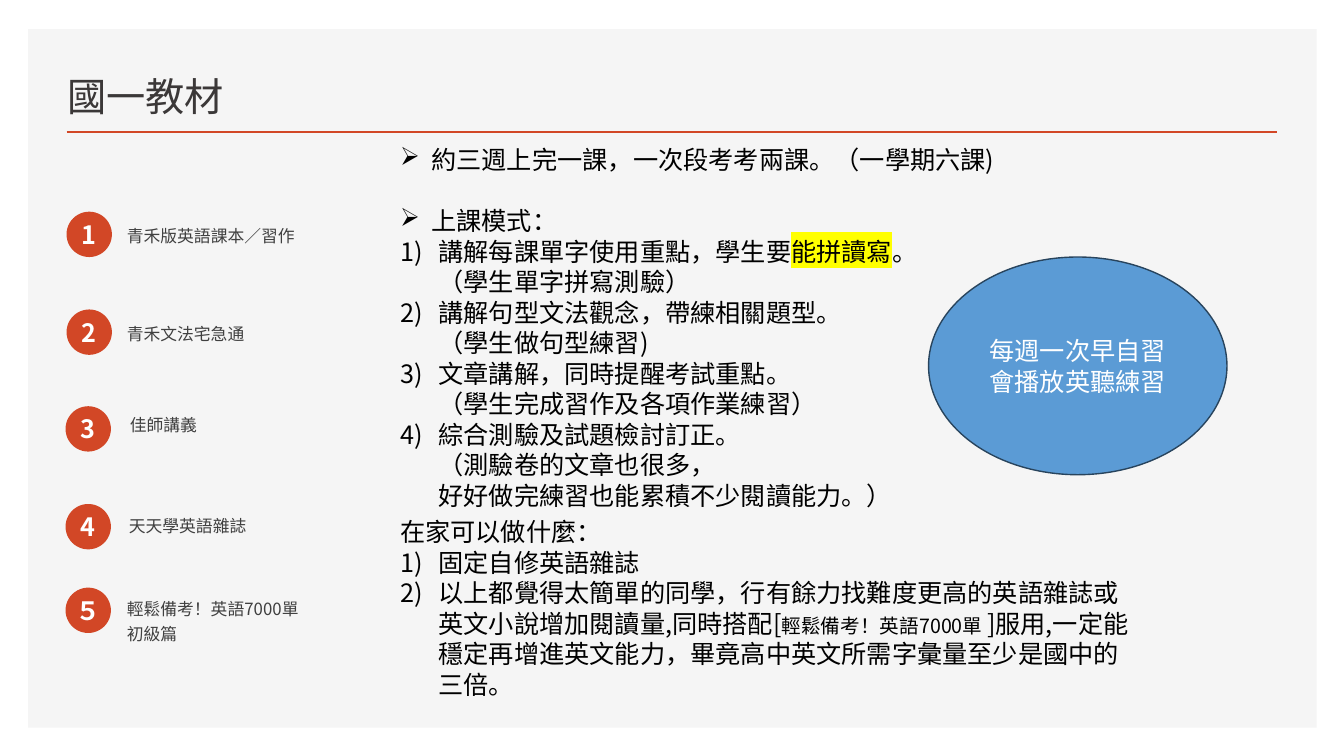
from lxml import etree
from pptx import Presentation
from pptx.dml.color import RGBColor
from pptx.enum.shapes import MSO_CONNECTOR, MSO_SHAPE
from pptx.enum.text import MSO_ANCHOR, PP_ALIGN
from pptx.oxml.ns import qn
from pptx.util import Inches, Pt

RECTANGLE, OVAL = MSO_SHAPE.RECTANGLE, MSO_SHAPE.OVAL
STRAIGHT = MSO_CONNECTOR.STRAIGHT
TOP, MIDDLE, BOTTOM = MSO_ANCHOR.TOP, MSO_ANCHOR.MIDDLE, MSO_ANCHOR.BOTTOM
CENTER = PP_ALIGN.CENTER

PANEL = RGBColor(0xF5, 0xF5, 0xF5)
ACCENT = RGBColor(0xD2, 0x47, 0x26)
TITLE = RGBColor(0x3B, 0x38, 0x38)
LABEL = RGBColor(0x40, 0x40, 0x40)
BLACK = RGBColor(0, 0, 0)
WHITE = RGBColor(0xFF, 0xFF, 0xFF)
YELLOW = RGBColor(0xFF, 0xFF, 0)
BLUE = RGBColor(0x5B, 0x9B, 0xD5)
BLUE_EDGE = RGBColor(0x28, 0x44, 0x5D)

TRADITIONAL = "Noto Sans CJK TC"
SIMPLIFIED = "Noto Sans CJK SC"
ROBOTO = "Roboto"
BODY_PITCH = Pt(21.8)

# number, badge left and top, label left, top and width, label text
MATERIALS = [
    ("1", 0.66, 2.1, 1.16, 2.14, 5.02, "青禾版英語課本／習作"),
    ("2", 0.66, 3.07, 1.16, 3.11, 5.17, "青禾文法宅急通"),
    ("3", 0.65, 4.03, 1.19, 4.02, 4.93, "佳師講義"),
    ("4", 0.65, 5, 1.18, 5.02, 4.93, "天天學英語雜誌"),
    ("５", 0.65, 5.83, 1.16, 5.84, 1.93, "輕鬆備考！英語7000單 初級篇"),
]

ARROW, NUMBER = "arrow", "number"
# bullet, space before in points, spans of (text, size, highlight)
CLASS_NOTES = [
    (ARROW, 0, [("約三週上完一課，一次段考考兩課。（一學期六課)", 18, None)]),
    (ARROW, 21.8, [("上課模式：", 18, None)]),
    (NUMBER, 0, [("講解每課單字使用重點，學生要", 18, None),
                 ("能拼讀寫", 18, YELLOW),
                 ("。\n（學生單字拼寫測驗）", 18, None)]),
    (NUMBER, 0, [("講解句型文法觀念，帶練相關題型。\n（學生做句型練習)", 18, None)]),
    (NUMBER, 0, [("文章講解，同時提醒考試重點。\n（學生完成習作及各項作業練習）", 18, None)]),
    (NUMBER, 0, [("綜合測驗及試題檢討訂正。\n（測驗卷的文章也很多，\n"
                  "好好做完練習也能累積不少閱讀能力。）", 18, None)]),
]
HOME_NOTES = [
    (None, 0, [("在家可以做什麼：", 18, None)]),
    (NUMBER, 0, [("固定自修英語雜誌", 18, None)]),
    (NUMBER, 0, [("以上都覺得太簡單的同學，行有餘力找難度更高的英語雜誌或"
                  "英文小說增加閱讀量,同時搭配[", 18, None),
                 ("輕鬆備考！英語7000單 ", 14, None),
                 ("]服用,一定能穩定再增進英文能力，"
                  "畢竟高中英文所需字彙量至少是國中的三倍。", 18, None)]),
]


def add_span(para, text, size, color, font, asian_font=None, bold=False, highlight=None):
    """Add text in one style; a newline becomes a line break."""
    for index, line in enumerate(text.split("\n")):
        if index:
            para.add_line_break()
        span = para.add_run()
        span.text = line
        span.font.size = Pt(size)
        span.font.bold = bold
        span.font.color.rgb = color
        span.font.name = font
        properties = span.font._element
        latin = properties.find(qn("a:latin"))
        asian = etree.Element(qn("a:ea"), typeface=asian_font or font)
        latin.addnext(asian)
        if highlight is not None:
            mark = etree.Element(qn("a:highlight"))
            etree.SubElement(mark, qn("a:srgbClr"), val=str(highlight))
            latin.addprevious(mark)


def set_bullet(para, bullet):
    indent = Inches(0.31 if bullet == ARROW else 0.38)
    properties = para._p.get_or_add_pPr()
    properties.set("marL", str(indent))
    properties.set("indent", str(-indent))
    if bullet == ARROW:
        etree.SubElement(properties, qn("a:buChar"), char="➢")
    else:
        etree.SubElement(properties, qn("a:buAutoNum"), type="arabicParenR")


def add_text_box(page, left, top, width, height, anchor=TOP):
    box = page.shapes.add_textbox(Inches(left), Inches(top), Inches(width), Inches(height))
    box.text_frame.word_wrap = True
    box.text_frame.vertical_anchor = anchor
    return box.text_frame


def add_solid(page, kind, left, top, width, height, fill, edge=None):
    shape = page.shapes.add_shape(kind, Inches(left), Inches(top), Inches(width), Inches(height))
    shape.shadow.inherit = False
    shape.fill.solid()
    shape.fill.fore_color.rgb = fill
    if edge is None:
        shape.line.fill.background()
    else:
        shape.line.color.rgb = edge
        shape.line.width = Pt(1)
    return shape


def add_header(page, left, top, width, height):
    """Place the title and the rule under it."""
    frame = add_text_box(page, left, top, width, height, BOTTOM)
    add_span(frame.paragraphs[0], "國一教材", 28, TITLE, TRADITIONAL)
    rule_left, rule_top = Inches(left + 0.09), Inches(top + 0.78)
    rule = page.shapes.add_connector(
        STRAIGHT, rule_left, rule_top, rule_left + Inches(12.01), rule_top)
    rule.line.color.rgb = ACCENT
    rule.line.width = Pt(2)
    etree.SubElement(rule._element.spPr, qn("a:effectLst"))


def add_badge(page, left, top, number):
    badge = add_solid(page, OVAL, left, top, 0.45, 0.45, ACCENT)
    frame = badge.text_frame
    frame.margin_left = frame.margin_right = frame.margin_top = frame.margin_bottom = 0
    frame.word_wrap = False
    frame.vertical_anchor = MIDDLE
    frame.paragraphs[0].alignment = CENTER
    add_span(frame.paragraphs[0], number, 18, WHITE, TRADITIONAL, bold=True)


def add_materials(page):
    for number, left, top, label_left, label_top, width, text in MATERIALS:
        add_badge(page, left, top, number)
        frame = add_text_box(page, label_left, label_top, width, 0.46)
        frame.paragraphs[0].line_spacing = Pt(18)
        add_span(frame.paragraphs[0], text, 12, LABEL, TRADITIONAL)


def add_notes_block(page, left, top, width, height, notes):
    frame = add_text_box(page, left, top, width, height)
    for index, (bullet, space, spans) in enumerate(notes):
        para = frame.add_paragraph() if index else frame.paragraphs[0]
        para.line_spacing = BODY_PITCH
        para.space_before = Pt(space)
        if bullet:
            set_bullet(para, bullet)
        for text, size, highlight in spans:
            add_span(para, text, size, BLACK, SIMPLIFIED, highlight=highlight)


def add_listening_callout(page, left, top, width, height):
    callout = add_solid(page, OVAL, left, top, width, height, BLUE, BLUE_EDGE)
    callout.text_frame.word_wrap = True
    callout.text_frame.vertical_anchor = MIDDLE
    para = callout.text_frame.paragraphs[0]
    para.alignment = CENTER
    para.line_spacing = BODY_PITCH
    add_span(para, "每週一次早自習會播放英聽練習", 18, WHITE, ROBOTO, TRADITIONAL)


def main():
    deck = Presentation()
    deck.slide_width, deck.slide_height = Inches(13.33), Inches(7.5)
    page = deck.slides.add_slide(deck.slide_layouts[6])
    add_solid(page, RECTANGLE, 0.28, 0.29, 12.78, 6.93, PANEL)
    add_header(page, 0.57, 0.53, 7.52, 0.7)
    add_materials(page)
    add_notes_block(page, 3.87, 1.38, 7.52, 3.74, CLASS_NOTES)
    add_notes_block(page, 3.87, 5.07, 7.52, 2.22, HOME_NOTES)
    add_listening_callout(page, 9.21, 2.55, 2.96, 2.16)
    deck.save("out.pptx")


if __name__ == "__main__":
    main()
